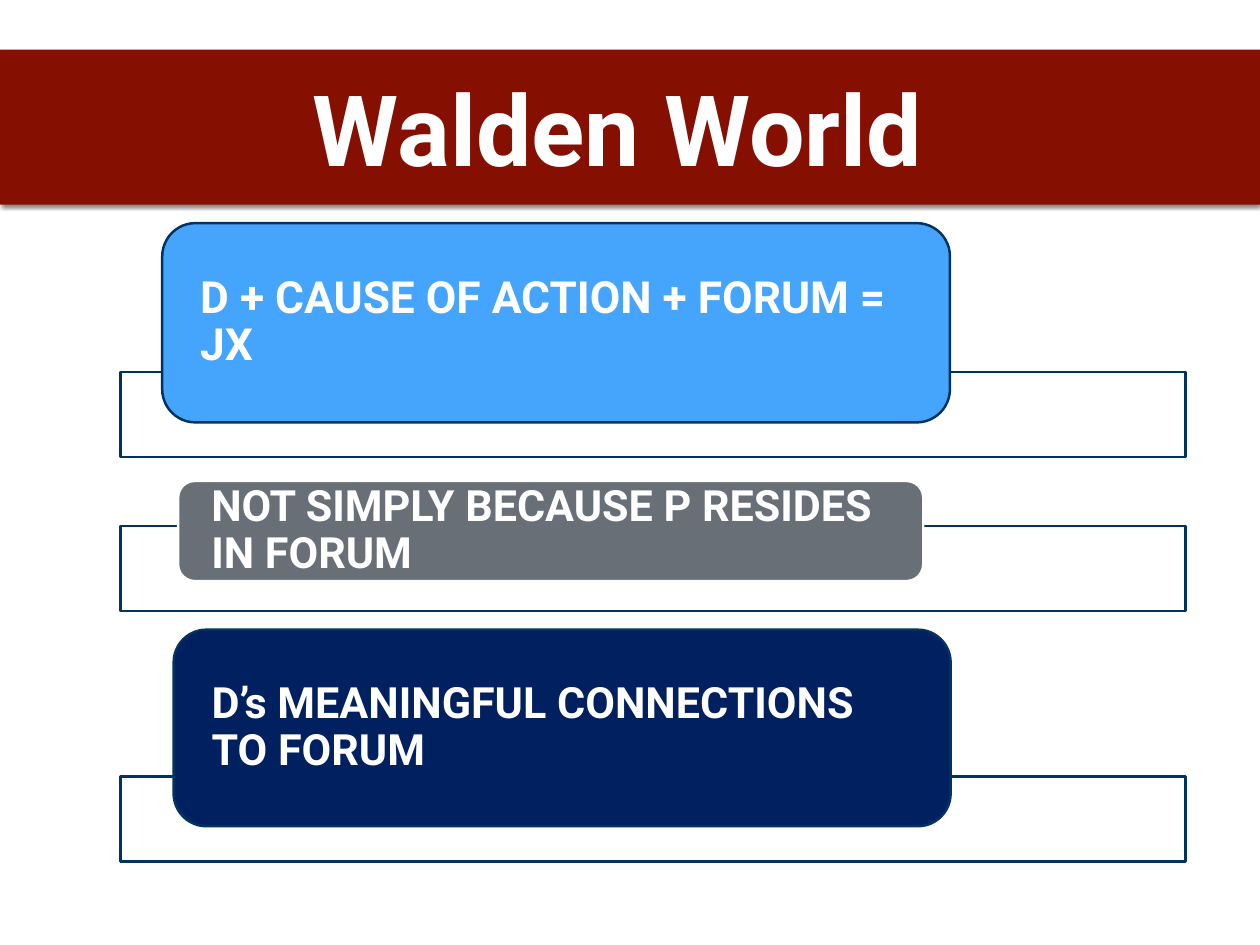
"""Build the Walden World slide: a title band and three framed points."""
from lxml import etree
from pptx import Presentation
from pptx.dml.color import RGBColor
from pptx.enum.shapes import MSO_SHAPE
from pptx.enum.text import MSO_ANCHOR, PP_ALIGN
from pptx.oxml import parse_xml
from pptx.oxml.ns import qn
from pptx.util import Pt

RECT, ROUND = MSO_SHAPE.RECTANGLE, MSO_SHAPE.ROUNDED_RECTANGLE
MIDDLE, LEFT, CENTER = MSO_ANCHOR.MIDDLE, PP_ALIGN.LEFT, PP_ALIGN.CENTER

WIDE, HIGH = 1023.84, 768.24
FONT, WHITE = "Roboto", "FFFFFF"
TITLE = "Walden World "
FRAME_X, FRAME_W, FRAME_H = 97.9, 865.4, 69.1
POINTS = [
    ("D + CAUSE OF ACTION + FORUM = JX", 36, "45A4FC", "013260",
     (131.8, 181.4, 640.1, 162), 302.4),
    ("NOT SIMPLY BECAUSE P RESIDES IN FORUM", 35, "686F76", WHITE,
     (144.7, 391, 605.5, 81.4), 427.7),
    ("D’s MEANINGFUL CONNECTIONS TO FORUM", 35, "002060", "013260",
     (141.1, 511.9, 631.4, 159.8), 631.4),
]
SHADOW = """<a:effectLst xmlns:a="http://schemas.openxmlformats.org/drawingml/2006/main">
<a:outerShdw blurRad="38100" dist="25400" dir="5400000" rotWithShape="0">
<a:srgbClr val="000000"><a:alpha val="50000"/></a:srgbClr></a:outerShdw></a:effectLst>"""


def color(code):
    return RGBColor.from_string(code)


def add_box(slide, kind, place, fill, line=None):
    box = slide.shapes.add_shape(kind, *map(Pt, place))
    box.shadow.inherit = False
    box.fill.solid()
    box.fill.fore_color.rgb = color(fill)
    if line:
        box.line.color.rgb = color(line)
        box.line.width = Pt(2)
    else:
        box.line.fill.background()
    return box


def set_text(shape, text, size, align, side, edge):
    frame = shape.text_frame
    frame.text = text
    frame.word_wrap = True
    frame.vertical_anchor = MIDDLE
    frame.margin_left = frame.margin_right = Pt(side)
    frame.margin_top = frame.margin_bottom = Pt(edge)
    para = frame.paragraphs[0]
    para.alignment = align
    font = para.runs[0].font
    font.name, font.size, font.bold = FONT, Pt(size), True
    font.color.rgb = color(WHITE)
    return para


def add_band(slide):
    band = add_box(slide, RECT, (0, 40.3, WIDE, 126), "851001")
    props = band.fill._xPr
    props.replace(props.find(qn("a:effectLst")), parse_xml(SHADOW))
    title = slide.shapes.title
    title.left, title.top, title.width, title.height = map(
        Pt, (74.9, 35.3, 874.1, 136.1))
    set_text(title, TITLE, 80, CENTER, 4.3, 4.3)
    title.element.addprevious(band.element)


def add_point(slide, text, size, fill, line, place, top):
    frame = add_box(slide, RECT, (FRAME_X, top, FRAME_W, FRAME_H), WHITE, "013360")
    tint = frame.fill._xPr.find(qn("a:solidFill"))[0]
    etree.SubElement(tint, qn("a:alpha")).set("val", "90000")
    label = add_box(slide, ROUND, place, fill, line)
    set_text(label, text, size, LEFT, 23, 0).line_spacing = 0.9


def main():
    deck = Presentation()
    deck.slide_width, deck.slide_height = Pt(WIDE), Pt(HIGH)
    slide = deck.slides.add_slide(deck.slide_layouts[5])
    add_band(slide)
    for point in POINTS:
        add_point(slide, *point)
    deck.save("out.pptx")


if __name__ == "__main__":
    main()
